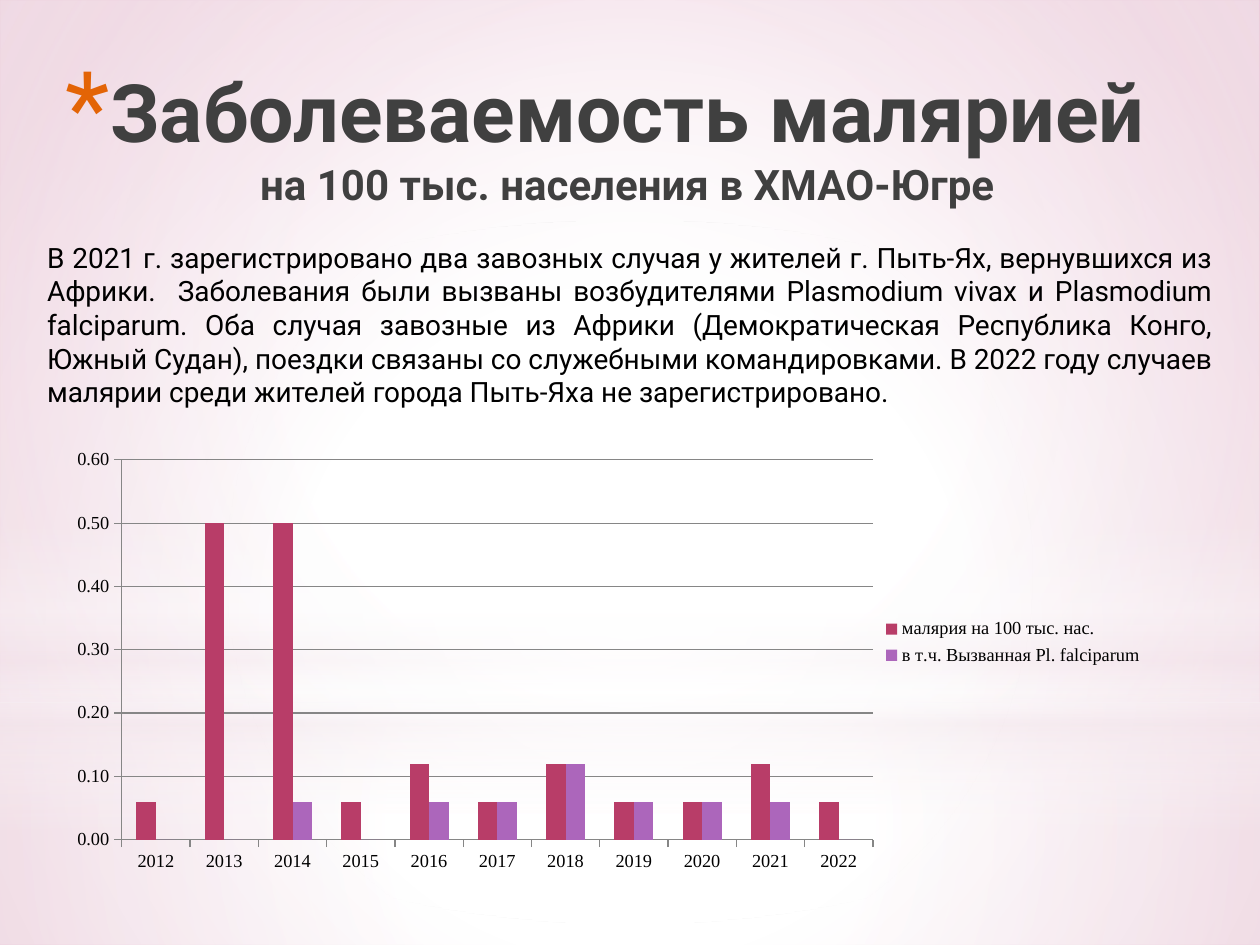
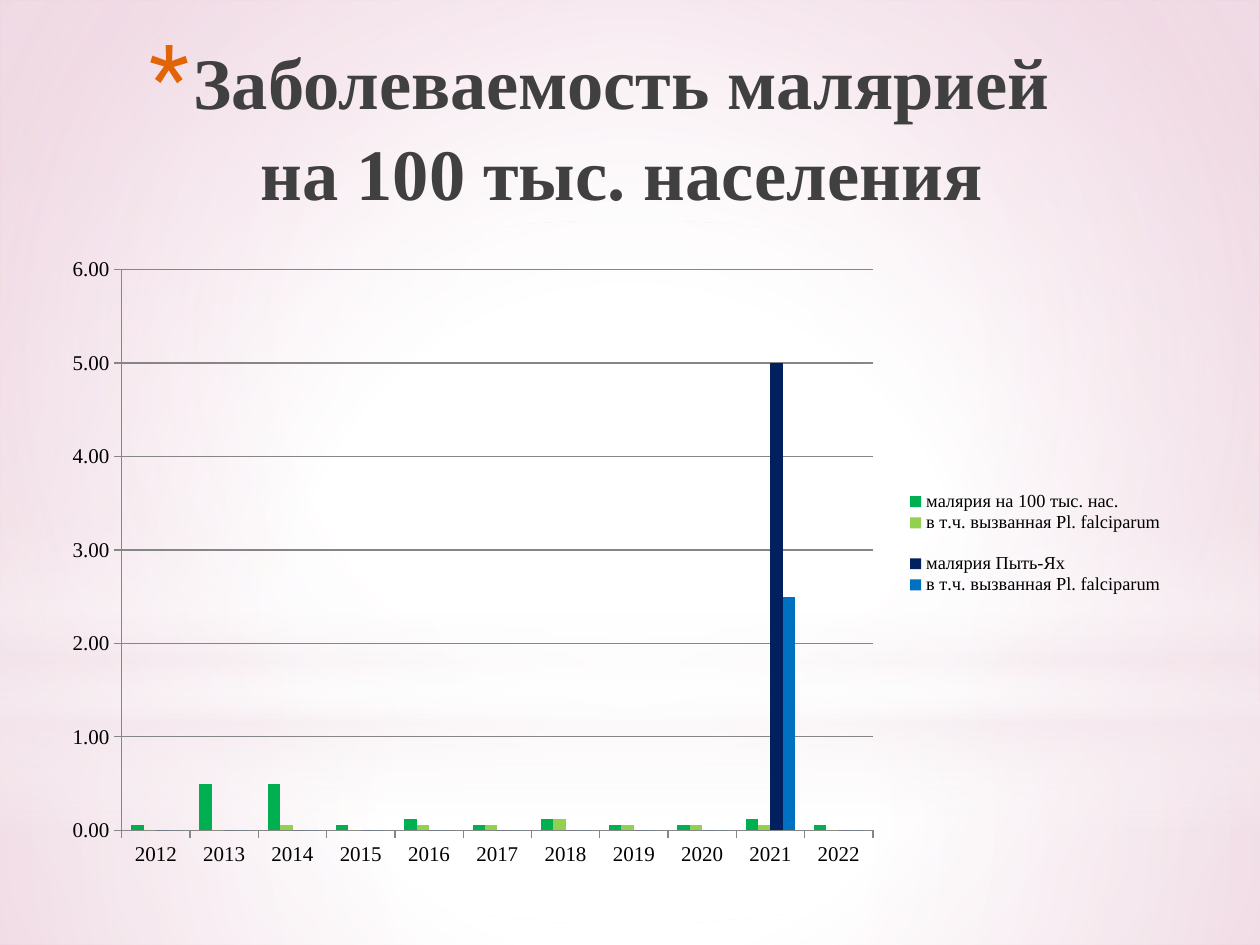
from lxml.etree import SubElement
from pptx import Presentation
from pptx.chart.data import CategoryChartData
from pptx.dml.color import RGBColor
from pptx.enum.chart import XL_CHART_TYPE as ChartType, XL_LEGEND_POSITION as LegendPosition
from pptx.enum.chart import XL_TICK_MARK as TickMark
from pptx.enum.shapes import MSO_SHAPE as Preset
from pptx.enum.text import PP_ALIGN as Align
from pptx.oxml.ns import qn
from pptx.util import Cm, Pt

SANS, SERIF = "Roboto", "Times New Roman"
BLACK, TITLE_GREY, GRID_GREY, ORANGE = "000000", "404040", "868686", "E36406"
WHITE, BLUSH, PINK = "FFFFFF", "F4E7ED", "DFA6C0"
CENTRE = (50, 50, 50, 50)
WIDTH, HEIGHT = 25.4, 19.05

BACKDROP = [
    (Preset.RECTANGLE, 14.17, 4.88, [(0, WHITE, 91), (37, WHITE, 76), (100, BLUSH, 79)], CENTRE),
    (Preset.RECTANGLE, 0, 14.17, [(0, WHITE, 89), (48, WHITE, 62), (100, BLUSH, 79)], CENTRE),
    (Preset.RECTANGLE, 10.46, 6.35, [(0, WHITE, 0), (29, WHITE, 30), (45, BLUSH, 40),
                                     (55, WHITE, 26), (65, BLUSH, 60), (100, WHITE, 0)], None),
    (Preset.OVAL, 4.45, 14.17, [(0, WHITE, 100), (56, WHITE, 0)], CENTRE),
]

YEARS = [str(year) for year in range(2012, 2023)]
REGION_ALL = [0.06, 0.5, 0.5, 0.06, 0.12, 0.06, 0.12, 0.06, 0.06, 0.12, 0.06]
REGION_FALCIPARUM = [0, 0, 0.06, 0, 0.06, 0.06, 0.12, 0.06, 0.06, 0.06, 0]

SUMMARY = (
    "В 2021 г. зарегистрировано два завозных случая у жителей г. Пыть-Ях, вернувшихся из Африки.  "
    "Заболевания были вызваны возбудителями Plasmodium vivax и Plasmodium falciparum. "
    "Оба случая завозные из Африки (Демократическая Республика Конго, Южный Судан), "
    "поездки связаны со служебными командировками. "
    "В 2022 году случаев малярии среди жителей города Пыть-Яха не зарегистрировано."
)


def colour(code):
    return RGBColor.from_string(code)


def only_in_2021(value):
    return [value if year == "2021" else 0 for year in YEARS]


def set_gradient(fill, element, stops, centre=None):
    fill.gradient()
    gradient = element.find(".//" + qn("a:gradFill"))
    for child in list(gradient):
        gradient.remove(child)
    stop_list = SubElement(gradient, qn("a:gsLst"))
    for position, code, opacity in stops:
        stop = SubElement(stop_list, qn("a:gs"), pos=str(position * 1000))
        tint = SubElement(stop, qn("a:srgbClr"), val=code)
        if opacity < 100:
            SubElement(tint, qn("a:alpha"), val=str(opacity * 1000))
    if centre:
        route = SubElement(gradient, qn("a:path"), {"path": "circle"})
        sides = {side: str(share * 1000) for side, share in zip("ltrb", centre)}
        SubElement(route, qn("a:fillToRect"), sides)
    else:
        SubElement(gradient, qn("a:lin"), ang="5400000", scaled="0")


def add_backdrop(page):
    for preset, top, height, stops, centre in BACKDROP:
        shape = page.shapes.add_shape(preset, 0, Cm(top), Cm(WIDTH), Cm(height))
        shape.shadow.inherit = False
        shape.line.fill.background()
        set_gradient(shape.fill, shape._element, stops, centre)


def add_text(page, place, lines, font=SANS, sizes=(16,), code=BLACK, bold=False,
             align=Align.JUSTIFY, spacing=1.0):
    box = page.shapes.add_textbox(*map(Cm, place))
    box.text_frame.word_wrap = True
    para = box.text_frame.paragraphs[0]
    para.alignment = align
    para.line_spacing = spacing
    for number, (line, size) in enumerate(zip(lines, sizes)):
        if number:
            para.add_line_break()
        span = para.add_run()
        span.text = line
        span.font.name, span.font.size, span.font.bold = font, Pt(size), bold
        span.font.color.rgb = colour(code)
    return para


def add_title(page, place, lines, **style):
    para = add_text(page, place, lines, code=TITLE_GREY, bold=True, align=Align.CENTER, **style)
    properties = para._p.get_or_add_pPr()
    properties.set("marL", str(Cm(0.89)))
    properties.set("indent", str(-Cm(0.89)))
    bullet_colour = SubElement(properties, qn("a:buClr"))
    SubElement(bullet_colour, qn("a:srgbClr"), val=ORANGE)
    SubElement(properties, qn("a:buSzPct"), val="128000")
    SubElement(properties, qn("a:buFont"), typeface=SANS)
    SubElement(properties, qn("a:buChar"), char="*")


def set_layout(parent, index, frame, inner=False):
    for old in parent.findall(qn("c:layout")):
        parent.remove(old)
    layout = SubElement(parent, qn("c:layout"))
    parent.insert(index, layout)
    manual = SubElement(layout, qn("c:manualLayout"))
    if inner:
        SubElement(manual, qn("c:layoutTarget"), val="inner")
    for mode in ("xMode", "yMode"):
        SubElement(manual, qn("c:" + mode), val="edge")
    for side, share in zip("xywh", frame):
        SubElement(manual, qn("c:" + side), val=str(share))


def style_font(font, size):
    font.name, font.size = SERIF, Pt(size)
    font.color.rgb = colour(BLACK)


def style_line(line):
    line.color.rgb = colour(GRID_GREY)
    line.width = Pt(0.75)


def add_column_chart(page, place, series, axis_size, plot_frame, legend_frame):
    data = CategoryChartData(number_format="0.00")
    data.categories = YEARS
    for name, values, _ in series:
        data.add_series(name, values)
    chart = page.shapes.add_chart(ChartType.COLUMN_CLUSTERED, *map(Cm, place), data).chart
    chart.has_title = False
    chart.font.name, chart.font.size = SANS, Pt(10)
    plot = chart.plots[0]
    plot.gap_width, plot.overlap, plot.vary_by_categories = 150, 0, False
    for column, (_, _, code) in zip(plot.series, series):
        column.format.fill.solid()
        column.format.fill.fore_color.rgb = colour(code)
    for axis in (chart.category_axis, chart.value_axis):
        axis.major_tick_mark = TickMark.OUTSIDE
        style_font(axis.tick_labels.font, axis_size)
        style_line(axis.format.line)
    chart.value_axis.tick_labels.number_format = "0.00"
    chart.value_axis.tick_labels.number_format_is_linked = False
    style_line(chart.value_axis.major_gridlines.format.line)
    chart.has_legend = True
    chart.legend.position = LegendPosition.RIGHT
    chart.legend.include_in_layout = False
    style_font(chart.legend.font, 10.5)
    set_layout(chart._chartSpace.find(".//" + qn("c:plotArea")), 0, plot_frame, inner=True)
    set_layout(chart.legend._element, 1, legend_frame)


def add_page(deck):
    page = deck.slides.add_slide(deck.slide_layouts[6])
    add_backdrop(page)
    return page


def main():
    deck = Presentation()
    deck.slide_width, deck.slide_height = Cm(WIDTH), Cm(HEIGHT)
    master = deck.slide_master
    set_gradient(master.background.fill, master._element,
                 [(0, WHITE, 100), (42, WHITE, 100), (100, PINK, 100)], (24, 44, 24, 12))

    page = add_page(deck)
    add_title(page, (0.5, 1.12, 23.4, 3.18),
              ["Заболеваемость малярией", "на 100 тыс. населения в ХМАО-Югре"], sizes=(46, 24))
    add_text(page, (0.7, 4.72, 24, 3.68), [SUMMARY])
    add_column_chart(page, (1.1, 8.92, 22.6, 8.8), [
        ("малярия на 100 тыс. нас.", REGION_ALL, "B83D68"),
        ("в т.ч. Вызванная Pl. falciparum\n", REGION_FALCIPARUM, "AC66BB"),
    ], 10.5, (0.06, 0.04, 0.67, 0.87), (0.73, 0.39, 0.25, 0.18))

    page = add_page(deck)
    add_title(page, (1.1, 0.53, 21.97, 3.2), ["Заболеваемость малярией", "на 100 тыс. населения"],
              font=SERIF, sizes=(41.4, 41.4), spacing=1.05)
    add_column_chart(page, (1.1, 4.93, 22.6, 12.7), [
        ("малярия на 100 тыс. нас.", REGION_ALL, "00B050"),
        ("в т.ч. вызванная Pl. falciparum\n", REGION_FALCIPARUM, "92D050"),
        ("малярия Пыть-Ях", only_in_2021(5), "002060"),
        ("в т.ч. вызванная Pl. falciparum\n", only_in_2021(2.5), "0070C0"),
    ], 12, (0.06, 0.04, 0.67, 0.89), (0.76, 0.39, 0.23, 0.2))

    deck.save("out.pptx")


if __name__ == "__main__":
    main()
